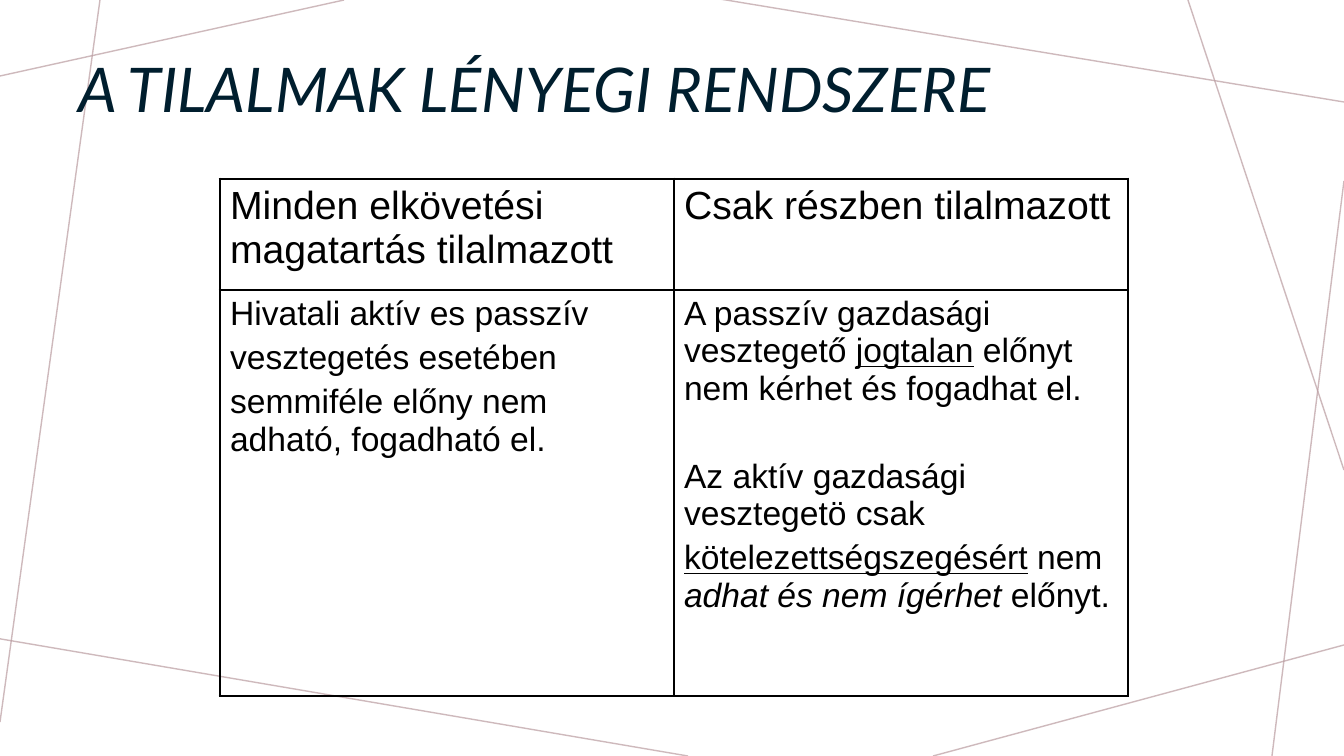
from dataclasses import dataclass

from lxml.etree import SubElement
from pptx import Presentation
from pptx.dml.color import RGBColor
from pptx.enum.shapes import MSO_CONNECTOR
from pptx.enum.text import MSO_ANCHOR, MSO_AUTO_SIZE, PP_ALIGN
from pptx.oxml.ns import qn
from pptx.slide import Slide
from pptx.table import Table, _Cell
from pptx.text.text import _Run
from pptx.util import Emu, Pt

SLIDE_WIDTH, SLIDE_HEIGHT = 1344, 756
EMU_PER_PX = 12192000 / SLIDE_WIDTH


@dataclass(frozen=True)
class Theme:
    title_font: str = "Lato"
    body_font: str = "Arial"
    title_color: str = "001E2E"
    text_color: str = "000000"
    border_color: str = "000000"
    web_color: str = "BA9CA0"
    web_opacity: int = 70
    title_size: int = 44
    header_size: int = 28
    body_size: int = 24
    web_width: float = 1
    inner_border: float = 1
    outer_border: float = 2.25


@dataclass(frozen=True)
class WebLine:
    x1: int
    y1: int
    x2: int
    y2: int


@dataclass(frozen=True)
class Piece:
    text: str
    underline: bool = False
    italic: bool = False


@dataclass(frozen=True)
class Passage:
    pieces: tuple[Piece, ...]
    space_before: float = 4.8


THEME = Theme()

WEB_LINES = (
    WebLine(344, 0, 0, 76),
    WebLine(100, 0, 0, 722),
    WebLine(688, 756, -5, 638),
    WebLine(1344, 645, 933, 756),
    WebLine(1344, 181, 1272, 756),
    WebLine(1344, 470, 1188, 0),
    WebLine(1344, 102, 720, -1),
)

COLUMN_WIDTHS = (454, 454)
ROW_HEIGHTS = (111, 406)
ROW_SIZES = (THEME.header_size, THEME.body_size)

CELLS = (
    (
        (Passage((Piece("Minden elkövetési magatartás tilalmazott"),)),),
        (Passage((Piece("Csak részben tilalmazott"),)),),
    ),
    (
        (
            Passage((Piece("Hivatali aktív es passzív"),)),
            Passage((Piece("vesztegetés esetében"),)),
            Passage((Piece("semmiféle előny nem adható, fogadható el."),)),
        ),
        (
            Passage((
                Piece("A passzív gazdasági vesztegető "),
                Piece("jogtalan", underline=True),
                Piece(" előnyt nem kérhet és fogadhat el."),
            )),
            Passage((Piece("Az aktív gazdasági vesztegetö csak"),), space_before=36),
            Passage((
                Piece("kötelezettségszegésért", underline=True),
                Piece(" nem "),
                Piece("adhat és nem ígérhet ", italic=True),
                Piece("előnyt."),
            )),
        ),
    ),
)


def px(length: int) -> Emu:
    return Emu(round(length * EMU_PER_PX))


def format_run(run: _Run, font: str, size: int, color: str, italic: bool) -> None:
    run.font.name = font
    run.font.size = Pt(size)
    run.font.italic = italic
    run.font.color.rgb = RGBColor.from_string(color)


def add_web_line(slide: Slide, line: WebLine) -> None:
    connector = slide.shapes.add_connector(
        MSO_CONNECTOR.STRAIGHT, px(line.x1), px(line.y1), px(line.x2), px(line.y2)
    )
    connector.line.width = Pt(THEME.web_width)
    connector.line.color.rgb = RGBColor.from_string(THEME.web_color)
    color = connector.element.find(".//" + qn("a:srgbClr"))
    SubElement(color, qn("a:alpha"), val=str(THEME.web_opacity * 1000))
    SubElement(connector.element.spPr, qn("a:effectLst"))


def set_title(slide: Slide, text: str) -> None:
    """Fill the title placeholder and bring it in front of the web lines."""
    title = slide.shapes.title
    title.left, title.top, title.width, title.height = px(68), px(30), px(1210), px(126)
    frame = title.text_frame
    frame.text = text
    frame.word_wrap = True
    frame.auto_size = MSO_AUTO_SIZE.NONE
    frame.vertical_anchor = MSO_ANCHOR.MIDDLE
    paragraph = frame.paragraphs[0]
    paragraph.alignment = PP_ALIGN.LEFT
    paragraph.line_spacing = 0.9
    format_run(paragraph.runs[0], THEME.title_font, THEME.title_size, THEME.title_color, True)
    slide.shapes.element.append(title.element)


def set_borders(cell: _Cell, row: int, column: int) -> None:
    """Draw thick borders on the table's outer edge and thin ones inside."""
    outer_edges = {
        "a:lnL": column == 0,
        "a:lnR": column == len(COLUMN_WIDTHS) - 1,
        "a:lnT": row == 0,
        "a:lnB": row == len(ROW_HEIGHTS) - 1,
    }
    properties = cell._tc.get_or_add_tcPr()
    for tag, is_outer in outer_edges.items():
        width = THEME.outer_border if is_outer else THEME.inner_border
        border = SubElement(properties, qn(tag), w=str(Pt(width)))
        fill = SubElement(border, qn("a:solidFill"))
        SubElement(fill, qn("a:srgbClr"), val=THEME.border_color)


def fill_cell(cell: _Cell, passages: tuple[Passage, ...], size: int) -> None:
    frame = cell.text_frame
    for index, passage in enumerate(passages):
        paragraph = frame.add_paragraph() if index else frame.paragraphs[0]
        if index:
            paragraph.space_before = Pt(passage.space_before)
        for piece in passage.pieces:
            run = paragraph.add_run()
            run.text = piece.text
            format_run(run, THEME.body_font, size, THEME.text_color, piece.italic)
            run.font.bold = False
            run.font.underline = piece.underline


def add_prohibition_table(slide: Slide) -> Table:
    table = slide.shapes.add_table(
        len(ROW_HEIGHTS), len(COLUMN_WIDTHS),
        px(220), px(179), px(sum(COLUMN_WIDTHS)), px(sum(ROW_HEIGHTS)),
    ).table
    table.first_row = table.horz_banding = False
    for column, width in zip(table.columns, COLUMN_WIDTHS):
        column.width = px(width)
    for row_index, height in enumerate(ROW_HEIGHTS):
        table.rows[row_index].height = px(height)
        for column_index, passages in enumerate(CELLS[row_index]):
            cell = table.cell(row_index, column_index)
            set_borders(cell, row_index, column_index)
            cell.fill.background()
            fill_cell(cell, passages, ROW_SIZES[row_index])
    return table


def main() -> None:
    presentation = Presentation()
    presentation.slide_width = px(SLIDE_WIDTH)
    presentation.slide_height = px(SLIDE_HEIGHT)
    title_only = presentation.slide_layouts.get_by_name("Title Only")
    slide = presentation.slides.add_slide(title_only)
    for line in WEB_LINES:
        add_web_line(slide, line)
    set_title(slide, "A TILALMAK LÉNYEGI RENDSZERE")
    add_prohibition_table(slide)
    presentation.save("out.pptx")


if __name__ == "__main__":
    main()
